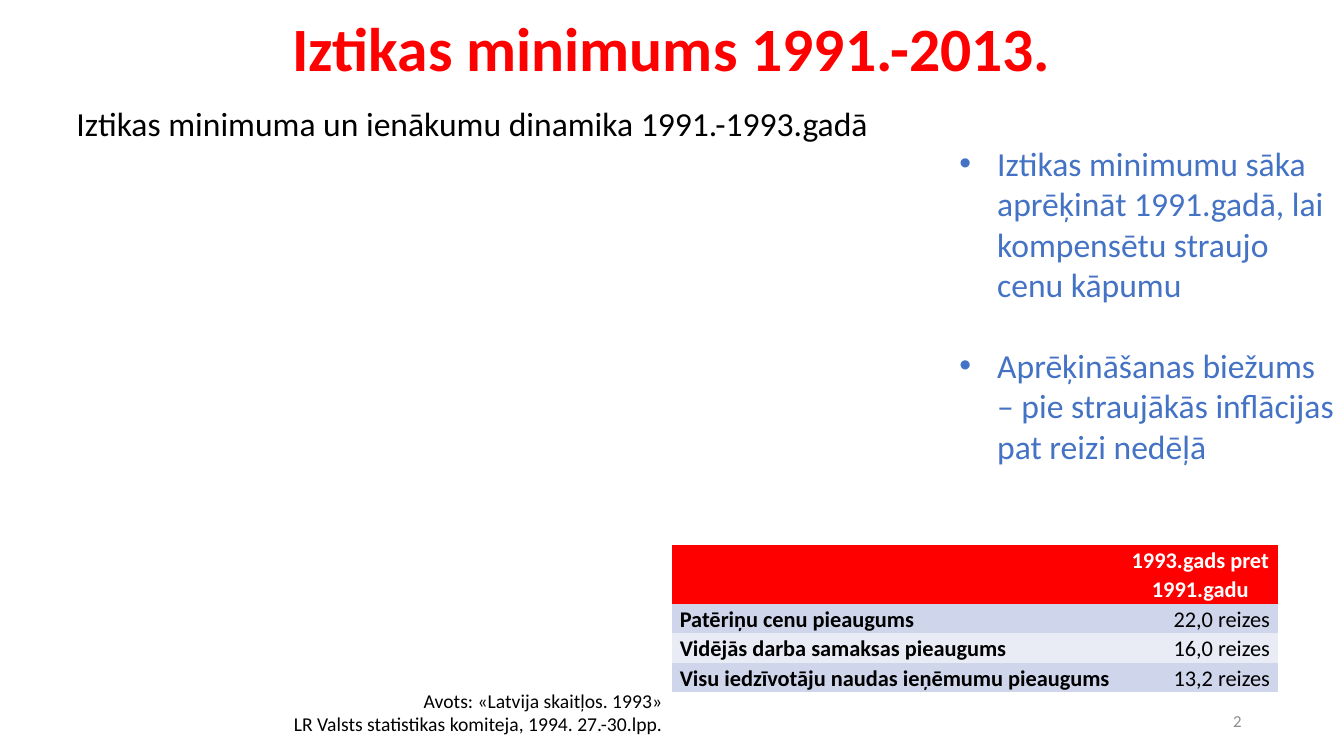
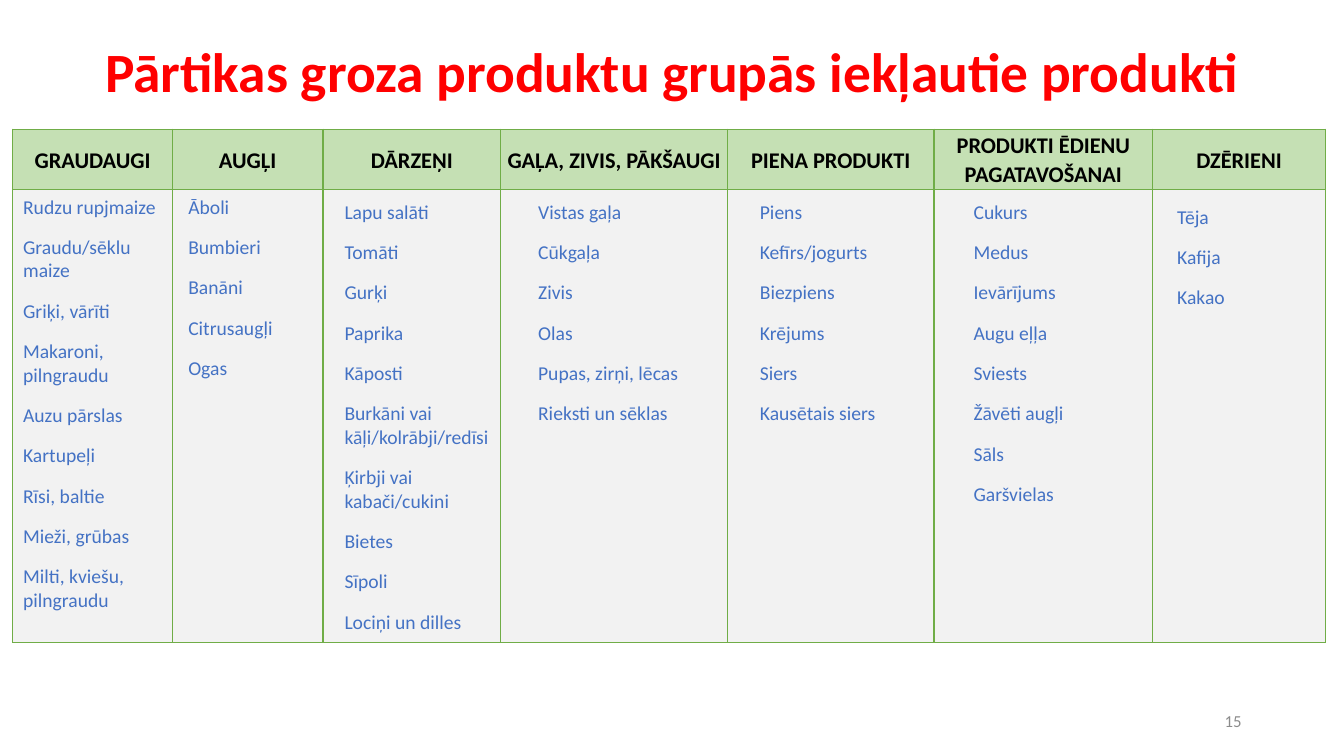
"""Build two slides about the subsistence minimum and the food basket."""
from lxml.etree import SubElement as Sub
from pptx import Presentation
from pptx.dml.color import RGBColor as RGB
from pptx.enum.text import MSO_ANCHOR as Anchor, PP_ALIGN as Align
from pptx.oxml.ns import qn
from pptx.util import Pt

FONT = "Calibri"
RED, BLUE, BLACK = RGB(255, 0, 0), RGB(0x44, 0x72, 0xC4), RGB(0, 0, 0)
WHITE, GREY, PALE = RGB(255, 255, 255), RGB(0x8C, 0x8C, 0x8C), RGB(0xF2, 0xF2, 0xF2)
BANDS = RGB(0xCF, 0xD5, 0xEA), RGB(0xE9, 0xEB, 0xF5)
MINT, GREEN = RGB(0xC5, 0xE0, 0xB4), RGB(0x70, 0xAD, 0x47)
PLAIN = "{2D5ABB26-0587-4C30-8999-92F81FD0307C}"

TITLE = "Iztikas minimums 1991.-2013."
INTRO = "Iztikas minimuma un ienākumu dinamika 1991.-1993.gadā"
NOTES = [
    "Iztikas minimumu sāka aprēķināt 1991.gadā, lai kompensētu straujo cenu kāpumu",
    "Aprēķināšanas biežums – pie straujākās inflācijas pat reizi nedēļā",
]
SOURCE = ["Avots: «Latvija skaitļos. 1993»", "LR Valsts statistikas komiteja, 1994. 27.-30.lpp."]
GROWTH = [
    ("", "1993.gads pret 1991.gadu"),
    ("Patēriņu cenu pieaugums", "22,0 reizes"),
    ("Vidējās darba samaksas pieaugums", "16,0 reizes"),
    ("Visu iedzīvotāju naudas ieņēmumu pieaugums", "13,2 reizes"),
]

FOOD = "Pārtikas groza produktu grupās iekļautie produkti"
GROUPS = [
    ("GRAUDAUGI", 113.9, (9.4, 135.4, 111.6, 307.4),
     ["Rudzu rupjmaize", "Graudu/sēklu maize", "Griķi, vārīti", "Makaroni, pilngraudu",
      "Auzu pārslas", "Kartupeļi", "Rīsi, baltie", "Mieži, grūbas", "Milti, kviešu, pilngraudu"]),
    ("AUGĻI", 107.6, (127.4, 135.4, 111.6, 140.4),
     ["Āboli", "Bumbieri", "Banāni", "Citrusaugļi", "Ogas"]),
    ("DĀRZEŅI", 127, (239, 139, 118.8, 319.7),
     ["Lapu salāti", "Tomāti", "Gurķi", "Paprika", "Kāposti", "Burkāni vai kāļi/kolrābji/redīsi",
      "Ķirbji vai kabači/cukini", "Bietes", "Sīpoli", "Lociņi un dilles"]),
    ("GAĻA, ZIVIS, PĀKŠAUGI", 162, (377.3, 139, 118.8, 170),
     ["Vistas gaļa", "Cūkgaļa", "Zivis", "Olas", "Pupas, zirņi, lēcas", "Rieksti un sēklas"]),
    ("PIENA PRODUKTI", 147.5, (535.7, 139, 118.8, 170),
     ["Piens", "Kefīrs/jogurts", "Biezpiens", "Krējums", "Siers", "Kausētais siers"]),
    ("PRODUKTI ĒDIENU PAGATAVOŠANAI", 156.2, (688.3, 139, 118.8, 227.5),
     ["Cukurs", "Medus", "Ievārījums", "Augu eļļa", "Sviests", "Žāvēti augļi", "Sāls", "Garšvielas"]),
    ("DZĒRIENI", 123.4, (833.8, 142.6, 69, 82),
     ["Tēja", "Kafija", "Kakao"]),
]


def write(frame, text, size=14, color=BLACK, bold=False, align=Align.LEFT,
          lead=None, after=0, bullet=False):
    """Fill a text frame with one paragraph for each string."""
    frame.word_wrap = True
    for i, line in enumerate([text] if isinstance(text, str) else text):
        para = frame.add_paragraph() if i else frame.paragraphs[0]
        para.alignment, para.space_after = align, Pt(after)
        if lead:
            para.line_spacing = lead
        run = para.add_run()
        run.text = line
        font = run.font
        font.name, font.size, font.bold = FONT, Pt(size), bold
        font.color.rgb = color
        if bullet:
            props = para._p.get_or_add_pPr()
            props.set("marL", str(Pt(27)))
            props.set("indent", str(-Pt(27)))
            Sub(props, qn("a:buFont"), typeface="Arial")
            Sub(props, qn("a:buChar"), char="•")


def label(slide, area, text, anchor=Anchor.TOP, **style):
    """Add a text box."""
    frame = slide.shapes.add_textbox(*map(Pt, area)).text_frame
    frame.vertical_anchor = anchor
    write(frame, text, **style)


def page(deck, title, number, top, size):
    """Add a slide with its title and number."""
    slide = deck.slides.add_slide(deck.slide_layouts[6])
    label(slide, (66, top, 828, 73.4), title, Anchor.MIDDLE,
          size=size, color=RED, bold=True, align=Align.CENTER, lead=0.9)
    label(slide, (678, 500.4, 216, 28.8), number, Anchor.MIDDLE,
          size=12, color=GREY, align=Align.RIGHT)
    return slide


def grid(slide, left, top, cols, rows):
    """Add an unstyled table with the given widths and heights."""
    area = map(Pt, (left, top, sum(cols), sum(rows)))
    table = slide.shapes.add_table(len(rows), len(cols), *area).table
    table._tbl.tblPr.find(qn("a:tableStyleId")).text = PLAIN
    for col, width in zip(table.columns, cols):
        col.width = Pt(width)
    for row, height in zip(table.rows, rows):
        row.height = Pt(height)
    return table


def paint(cell, back, side, text="", **style):
    """Fill a cell and write its text."""
    cell.fill.solid()
    cell.fill.fore_color.rgb = back
    cell.margin_left = cell.margin_right = Pt(side)
    cell.margin_top = cell.margin_bottom = 0
    if text:
        write(cell.text_frame, text, size=16, lead=1.07, **style)


def border(cell, color):
    """Draw a thin line on all four sides of a cell."""
    props = cell._tc.get_or_add_tcPr()
    for i, side in enumerate("LRTB"):
        line = props.makeelement(qn("a:ln" + side), {"w": str(Pt(1))})
        fill = Sub(line, qn("a:solidFill"))
        Sub(fill, qn("a:srgbClr"), val=str(color))
        props.insert(i, line)


def income(deck):
    """Build the slide on prices and income."""
    slide = page(deck, TITLE, "2", 0, 44)
    table = grid(slide, 480.2, 389.5, (322, 110.4), (42, 21, 21, 21))
    for r, (name, value) in enumerate(GROWTH):
        back = BANDS[(r - 1) % 2] if r else RED
        paint(table.cell(r, 0), back, 5.4, name, bold=True)
        paint(table.cell(r, 1), back, 5.4, value, bold=not r,
              color=BLACK if r else WHITE, align=Align.RIGHT if r else Align.CENTER)
    label(slide, (196.6, 488.2, 283.7, 41), SOURCE, align=Align.RIGHT)
    label(slide, (678.2, 98.6, 282.2, 239.8), NOTES, size=24, color=BLUE, after=29, bullet=True)
    label(slide, (47.5, 69.8, 602.6, 36), INTRO, size=24)


def basket(deck):
    """Build the slide on the food basket."""
    slide = page(deck, FOOD, "15", 16.6, 39.6)
    table = grid(slide, 9.2, 92.2, [group[1] for group in GROUPS], (43.4, 323.3))
    for c, (name, _, area, foods) in enumerate(GROUPS):
        head, body = table.cell(0, c), table.cell(1, c)
        paint(head, MINT, 0.7, name, bold=True, align=Align.CENTER)
        head.vertical_anchor = Anchor.MIDDLE
        paint(body, PALE, 0.7)
        for cell in (head, body):
            border(cell, GREEN)
        label(slide, area, foods, color=BLUE, after=12)


def main():
    """Build and save the deck."""
    deck = Presentation()
    deck.slide_width, deck.slide_height = Pt(960), Pt(540)
    income(deck)
    basket(deck)
    deck.save("out.pptx")


if __name__ == "__main__":
    main()
